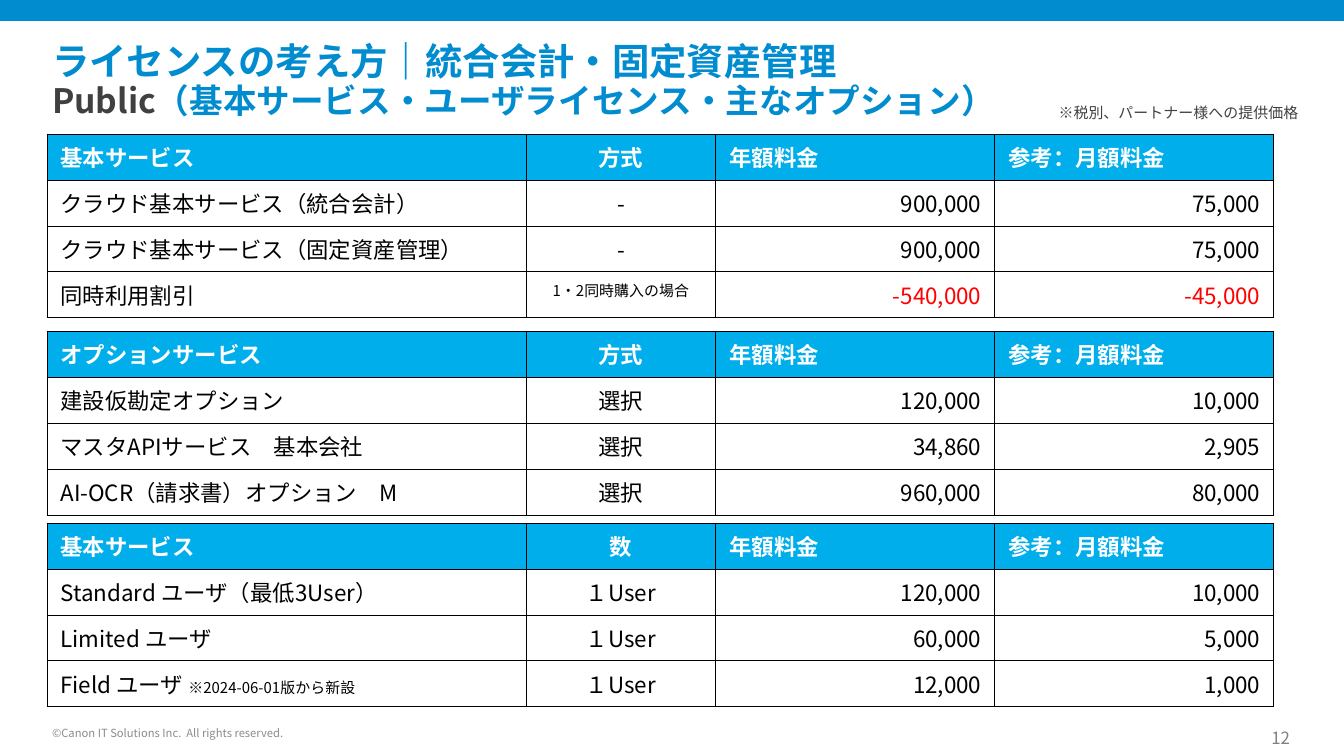
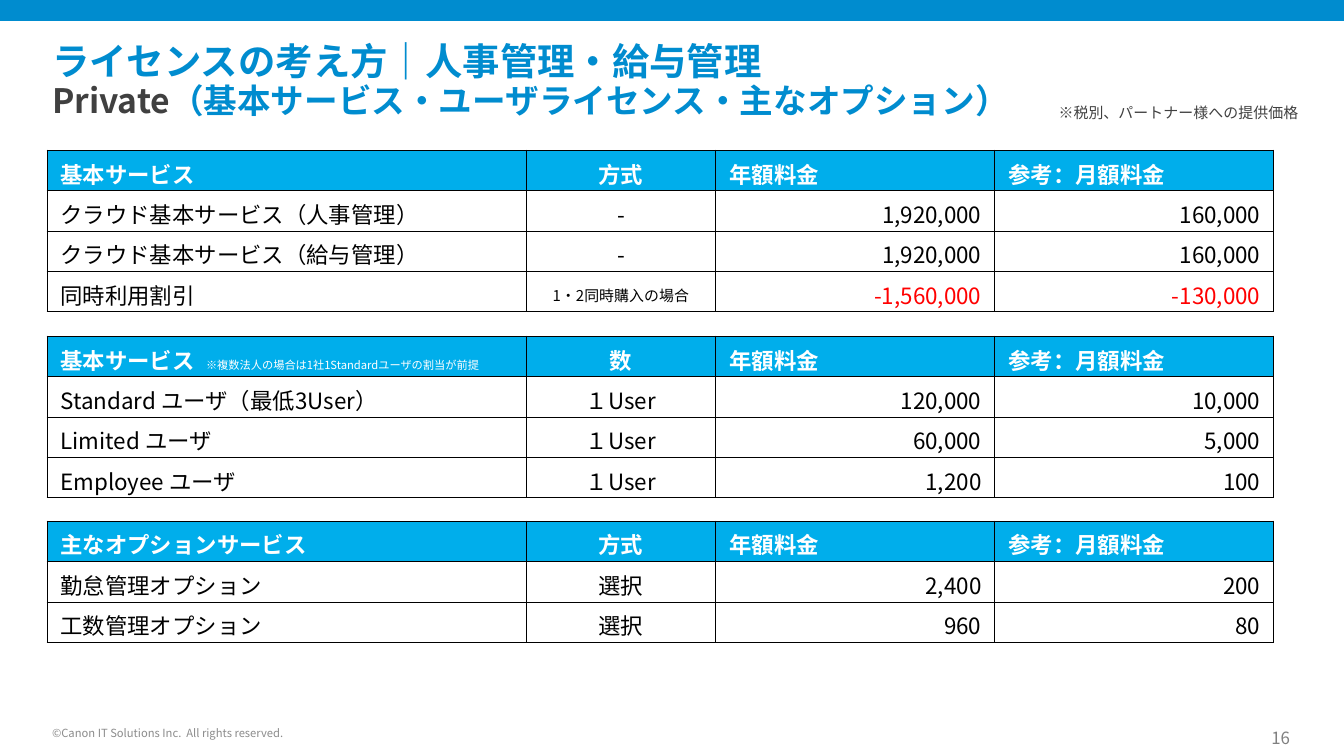
"""Builds two licence price slides, each with three price tables."""
from lxml import etree
from pptx import Presentation
from pptx import util as u
from pptx.dml.color import RGBColor
from pptx.enum import shapes, text
from pptx.oxml import ns

FONT = "Noto Sans CJK JP"
BLUE, CYAN, WHITE, BLACK, RED = "008CCF", "00AEEB", "FFFFFF", "000000", "FF0000"
DARK, GRAY, PALE = "404040", "808080", "8C8C8C"
LEFT, CENTER, RIGHT = text.PP_ALIGN.LEFT, text.PP_ALIGN.CENTER, text.PP_ALIGN.RIGHT
TOP, MIDDLE, BOTTOM = text.MSO_ANCHOR.TOP, text.MSO_ANCHOR.MIDDLE, text.MSO_ANCHOR.BOTTOM

BODY_SIZE = 12
TABLE_LEFT = 47
COLUMN_WIDTHS = (479, 190, 279, 279)
HEADER_ALIGNS = (LEFT, CENTER, LEFT, LEFT)
BODY_ALIGNS = (LEFT, CENTER, RIGHT, RIGHT)
PRICE_HEADERS = ("年額料金", "参考：月額料金")

SUBTITLE = "（基本サービス・ユーザライセンス・主なオプション）"
PRICE_NOTE = "※税別、パートナー様への提供価格"
COPYRIGHT = "©Canon IT Solutions Inc.  All rights reserved."
BOTH_BOUGHT = [("1・2同時購入の場合", 8)]
STANDARD = ("Standard ユーザ（最低3User）", "１User", "120,000", "10,000")
LIMITED = ("Limited ユーザ", "１User", "60,000", "5,000")

PAGES = [
    dict(
        title="ライセンスの考え方｜統合会計・固定資産管理", plan="Public", number="12",
        row_height=46, anchor=TOP, margins=(7, 6),
        tables=[
            (134, ("基本サービス", "方式"), [
                ("クラウド基本サービス（統合会計）", "-", "900,000", "75,000"),
                ("クラウド基本サービス（固定資産管理）", "-", "900,000", "75,000"),
                ("同時利用割引", BOTH_BOUGHT, "-540,000", "-45,000"),
            ]),
            (331, ("オプションサービス", "方式"), [
                ("建設仮勘定オプション", "選択", "120,000", "10,000"),
                ("マスタAPIサービス　基本会社", "選択", "34,860", "2,905"),
                ("AI-OCR（請求書）オプション　M", "選択", "960,000", "80,000"),
            ]),
            (523, ("基本サービス", "数"), [
                STANDARD,
                LIMITED,
                ([("Field ユーザ ", BODY_SIZE), ("※2024-06-01版から新設", 8)],
                 "１User", "12,000", "1,000"),
            ]),
        ],
    ),
    dict(
        title="ライセンスの考え方｜人事管理・給与管理", plan="Private", number="16",
        row_height=40, anchor=MIDDLE, margins=(7, 1),
        tables=[
            (150, ("基本サービス", "方式"), [
                ("クラウド基本サービス（人事管理）", "-", "1,920,000", "160,000"),
                ("クラウド基本サービス（給与管理）", "-", "1,920,000", "160,000"),
                ("同時利用割引", BOTH_BOUGHT, "-1,560,000", "-130,000"),
            ]),
            (336, ([("基本サービス", BODY_SIZE),
                    ("　※複数法人の場合は1社1Standardユーザの割当が前提", 6)], "数"), [
                STANDARD,
                LIMITED,
                ("Employee ユーザ", "１User", "1,200", "100"),
            ]),
            (521, ("主なオプションサービス", "方式"), [
                ("勤怠管理オプション", "選択", "2,400", "200"),
                ("工数管理オプション", "選択", "960", "80"),
            ]),
        ],
    ),
]


def px(length):
    return u.Emu(round(length * 914400 / 134.4))


def color(value):
    return RGBColor.from_string(value)


def add_span(para, words, size, ink, bold=False):
    span = para.add_run()
    span.text = words
    span.font.size = u.Pt(size)
    span.font.bold = bold
    span.font.color.rgb = color(ink)
    span.font.name = FONT
    latin = span.font._element.find(ns.qn("a:latin"))
    east_asian = etree.Element(ns.qn("a:ea"), typeface=FONT)
    latin.addnext(east_asian)


def set_frame(frame, anchor, inset=None):
    frame.word_wrap = True
    frame.auto_size = text.MSO_AUTO_SIZE.NONE
    frame.vertical_anchor = anchor
    if inset is not None:
        frame.margin_left = frame.margin_right = px(inset)
        frame.margin_top = frame.margin_bottom = px(inset)


def add_label(slide, place, words, size, ink, align, anchor, inset=None):
    box = slide.shapes.add_textbox(*map(px, place))
    set_frame(box.text_frame, anchor, inset)
    para = box.text_frame.paragraphs[0]
    para.alignment = align
    add_span(para, words, size, ink)


def add_band(slide):
    band = slide.shapes.add_shape(shapes.MSO_SHAPE.RECTANGLE, 0, 0, px(1344), px(21))
    band.shadow.inherit = False
    band.fill.solid()
    band.fill.fore_color.rgb = color(BLUE)
    band.line.fill.background()


def set_title(slide, title, plan):
    box = slide.shapes.title
    box.left, box.top, box.width, box.height = map(px, (52, 39, 1043, 86))
    set_frame(box.text_frame, MIDDLE, 0)
    para = box.text_frame.paragraphs[0]
    para.alignment = LEFT
    para.line_spacing = 0.9
    add_span(para, title, 20, BLUE, True)
    para.add_line_break()
    add_span(para, plan, 18, DARK, True)
    add_span(para, SUBTITLE, 18, BLUE, True)


def add_borders(cell):
    properties = cell._tc.get_or_add_tcPr()
    for side in ("lnL", "lnR", "lnT", "lnB"):
        line = etree.SubElement(properties, ns.qn(f"a:{side}"), w=str(u.Pt(0.5)))
        fill = etree.SubElement(line, ns.qn("a:solidFill"))
        etree.SubElement(fill, ns.qn("a:srgbClr"), val=BLACK)


def fill_cell(cell, content, align, is_header, page):
    add_borders(cell)
    cell.fill.solid()
    cell.fill.fore_color.rgb = color(CYAN if is_header else WHITE)
    cell.vertical_anchor = page["anchor"]
    cell.margin_top, cell.margin_bottom = map(px, page["margins"])
    para = cell.text_frame.paragraphs[0]
    para.alignment = align
    spans = [(content, BODY_SIZE)] if isinstance(content, str) else content
    for words, size in spans:
        is_discount = words.startswith("-") and len(words) > 1
        ink = WHITE if is_header else RED if is_discount else BLACK
        add_span(para, words, size, ink, is_header and size == BODY_SIZE)


def add_price_table(slide, page, top, headers, rows):
    lines = [headers + PRICE_HEADERS, *rows]
    height = page["row_height"]
    frame = slide.shapes.add_table(
        len(lines), len(COLUMN_WIDTHS), px(TABLE_LEFT), px(top),
        px(sum(COLUMN_WIDTHS)), px(height * len(lines)))
    table = frame.table
    table.first_row = table.horz_banding = False
    for column, width in zip(table.columns, COLUMN_WIDTHS):
        column.width = px(width)
    for index, line in enumerate(lines):
        table.rows[index].height = px(height)
        aligns = BODY_ALIGNS if index else HEADER_ALIGNS
        for cell, content, align in zip(table.rows[index].cells, line, aligns):
            fill_cell(cell, content, align, index == 0, page)


def main():
    deck = Presentation()
    deck.slide_width, deck.slide_height = px(1344), px(756)
    for page in PAGES:
        slide = deck.slides.add_slide(deck.slide_layouts[5])
        add_band(slide)
        set_title(slide, page["title"], page["plan"])
        add_label(slide, (1238, 728, 52, 20), page["number"], 9, GRAY, RIGHT, BOTTOM, 0)
        add_label(slide, (52, 720, 317, 20), COPYRIGHT, 6, PALE, LEFT, BOTTOM, 0)
        add_label(slide, (840, 97, 472, 32), PRICE_NOTE, 8, DARK, RIGHT, TOP)
        for top, headers, rows in page["tables"]:
            add_price_table(slide, page, top, headers, rows)
    deck.save("out.pptx")


if __name__ == "__main__":
    main()
